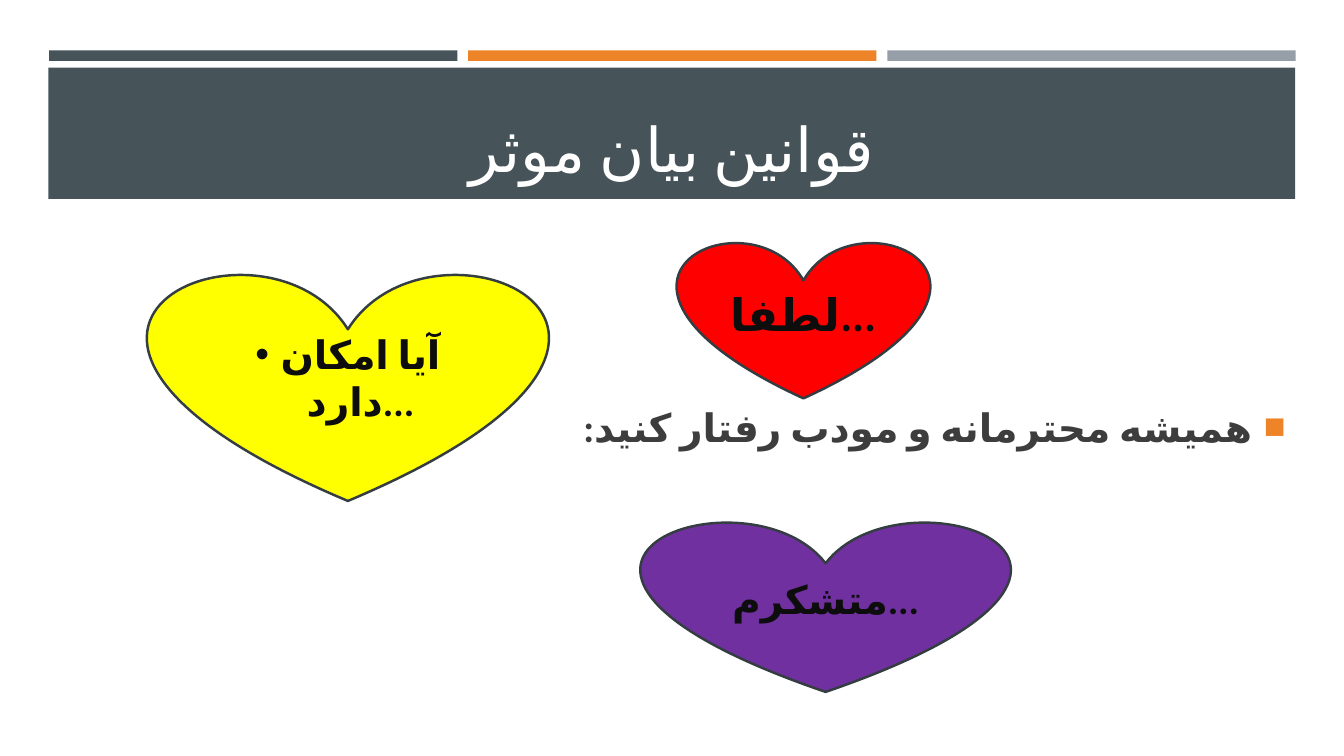
from pptx import Presentation
from pptx.dml.color import RGBColor
from pptx.enum.shapes import MSO_SHAPE
from pptx.enum.text import MSO_ANCHOR, MSO_AUTO_SIZE, PP_ALIGN
from pptx.oxml.ns import qn
from pptx.util import Inches, Pt
from lxml import etree

RECT, HEART = MSO_SHAPE.RECTANGLE, MSO_SHAPE.HEART
MID, LOW = MSO_ANCHOR.MIDDLE, MSO_ANCHOR.BOTTOM
CENTER, RIGHT = PP_ALIGN.CENTER, PP_ALIGN.RIGHT
SLATE, ORANGE, GREY = "465359", "ED8428", "969FA7"
INK, FONT = "0D0D0D", "Calibri"


def hue(code):
    return RGBColor.from_string(code)


def write(shape, text, size=28, color=INK, bold=True, align=CENTER,
          anchor=MID, rtl=False, mark=None, tint=None, scale=100, hang=0):
    frame = shape.text_frame
    frame.word_wrap = True
    frame.auto_size = MSO_AUTO_SIZE.NONE
    frame.vertical_anchor = anchor
    para = frame.paragraphs[0]
    para.alignment = align
    run = para.add_run()
    run.text = text
    run.font.name = FONT
    run.font.size = Pt(size)
    run.font.bold = bold
    run.font.color.rgb = hue(color)
    face = run._r.get_or_add_rPr()
    face.set("lang", "fa-IR")
    etree.SubElement(face, qn("a:cs"), typeface=FONT)
    props = para._p.get_or_add_pPr()
    if rtl:
        props.set("rtl", "1")
    if mark:
        props.set("marL", str(Inches(hang)))
        props.set("marR", "0")
        props.set("indent", str(-Inches(hang)))
        paint = etree.SubElement(props, qn("a:buClr"))
        etree.SubElement(paint, qn("a:srgbClr"), val=tint or color)
        etree.SubElement(props, qn("a:buSzPct"), val=str(scale * 1000))
        etree.SubElement(props, qn("a:buFont"), typeface="Arial")
        etree.SubElement(props, qn("a:buChar"), char=mark)


deck = Presentation()
deck.slide_width, deck.slide_height = Inches(13.33), Inches(7.5)
col, row = deck.slide_width / 100, deck.slide_height / 100
grid = (col, row, col, row)
slide = deck.slides.add_slide(deck.slide_layouts[5])
shapes = slide.shapes

bars = [(RECT, (3.66 + 31.18 * i, 6.67, 30.38, 1.4), tone, None, {})
        for i, tone in enumerate((SLATE, ORANGE, GREY))]
band = (RECT, (3.6, 8.95, 92.77, 17.37), SLATE, None, {})
hearts = [
    (HEART, (50.41, 31.9, 18.75, 20.8), "FF0000", "لطفا...", {"size": 32}),
    (HEART, (11.03, 36, 29.71, 30.27), "FFFF00", "آيا امكان دارد...",
     {"mark": "•", "hang": 0.25}),
    (HEART, (47.74, 68.85, 27.38, 22.67), "7030A0", "متشكرم...", {}),
]

for kind, spot, tone, text, style in bars + [band] + hearts:
    shape = shapes.add_shape(kind, *[int(n * u) for n, u in zip(spot, grid)])
    shape.shadow.inherit = False
    shape.fill.solid()
    shape.fill.fore_color.rgb = hue(tone)
    if text:
        shape.line.color.rgb = hue("343D42")
        shape.line.width = Pt(1.75)
        write(shape, text, **style)
    else:
        shape.line.fill.background()

title = shapes.title
title.left, title.top, title.width, title.height = [
    int(n * u) for n, u in zip((4.8, 10.27, 90.47, 14.8), grid)]
write(title, "قوانین بیان موثر", size=44, color="FFFFFF", bold=False,
      anchor=LOW, rtl=True)
shapes._spTree.append(title._element)

spot = (5.93, 31.87, 90.47, 49.07)
body = shapes.add_textbox(*[int(n * u) for n, u in zip(spot, grid)])
write(body, "هميشه محترمانه و مودب رفتار كنيد:", color="3D3D3D", align=RIGHT,
      rtl=True, mark="■", tint=ORANGE, scale=92, hang=0.33)

deck.save("out.pptx")
